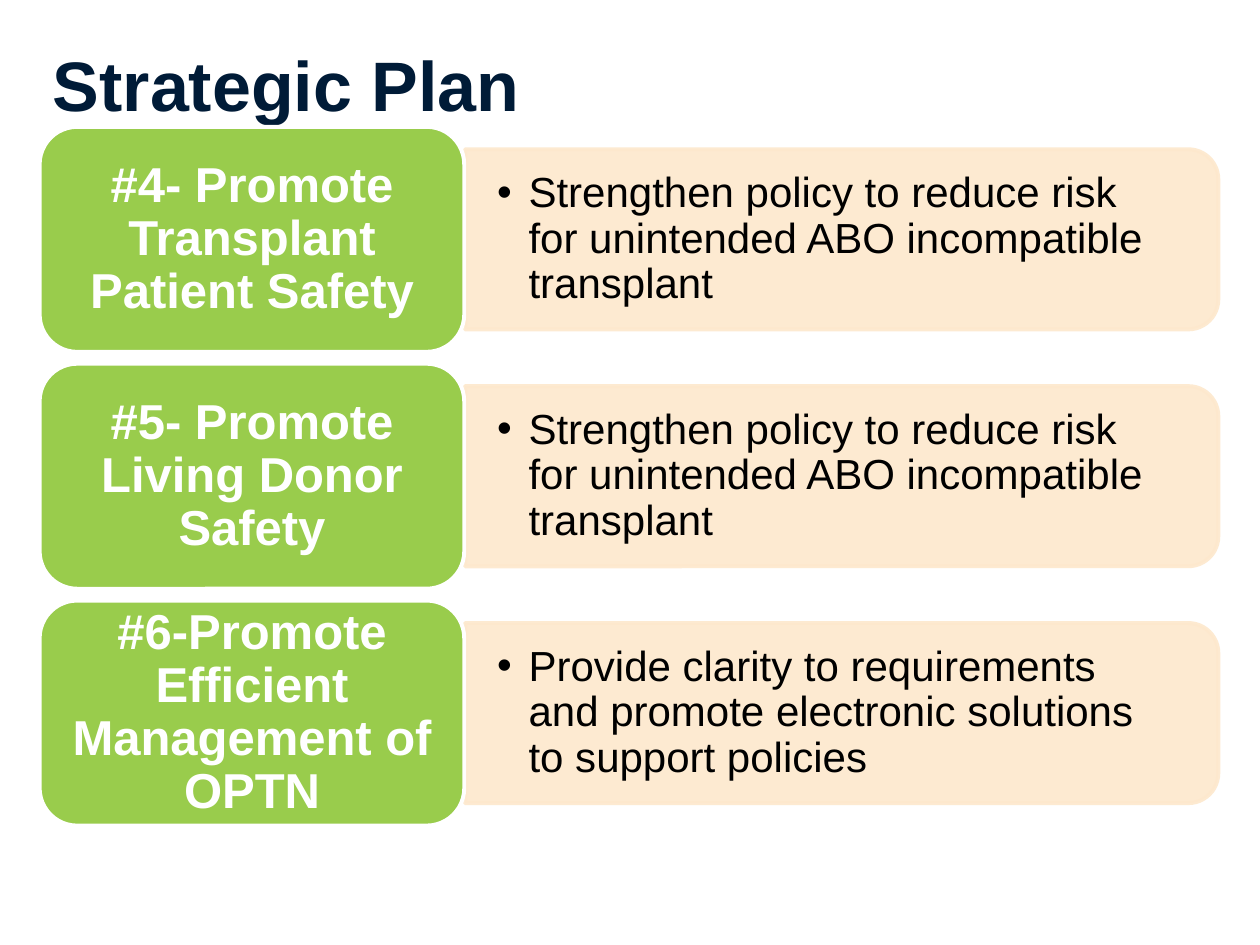
from lxml.etree import SubElement
from pptx import Presentation
from pptx.dml.color import RGBColor
from pptx.enum.shapes import MSO_SHAPE
from pptx.enum.text import MSO_ANCHOR, MSO_AUTO_SIZE, PP_ALIGN
from pptx.oxml.ns import qn
from pptx.util import Inches, Pt

NAVY = RGBColor(0x00, 0x1B, 0x37)
GREEN = RGBColor(0x99, 0xCC, 0x4C)
PEACH = RGBColor(0xFD, 0xE8, 0xCD)
WHITE = RGBColor(0xFF, 0xFF, 0xFF)
BLACK = RGBColor(0x00, 0x00, 0x00)

COLUMN = Inches(1)
ROW = Inches(1.88)
FIRST_ROW_TOP = Inches(0.96)

GOAL_CENTER, DETAIL_CENTER = 2.0, 6.63
GOALS = [
    ("#4- Promote Transplant Patient Safety",
     "Strengthen policy to reduce risk for unintended ABO incompatible transplant"),
    ("#5- Promote Living Donor Safety",
     "Strengthen policy to reduce risk for unintended ABO incompatible transplant"),
    ("#6-Promote Efficient Management of OPTN",
     "Provide clarity to requirements and promote electronic solutions to support policies"),
]


def grid_box(center_column, center_row, columns, rows):
    """Left, top, width and height of a box centred on a grid point."""
    width, height = round(columns * COLUMN), round(rows * ROW)
    left = round(center_column * COLUMN - width / 2)
    top = round(FIRST_ROW_TOP + center_row * ROW - height / 2)
    return left, top, width, height


def write_text(frame, text, *, size, color, bold=False, align=PP_ALIGN.LEFT,
               spacing=None, bullet=False, insets=(0.1, 0.05)):
    frame.word_wrap = True
    frame.auto_size = MSO_AUTO_SIZE.NONE
    frame.vertical_anchor = MSO_ANCHOR.MIDDLE
    frame.margin_left = frame.margin_right = Inches(insets[0])
    frame.margin_top = frame.margin_bottom = Inches(insets[1])
    paragraph = frame.paragraphs[0]
    paragraph.text = text
    paragraph.alignment = align
    if spacing:
        paragraph.line_spacing = spacing
    if bullet:
        add_bullet(paragraph)
    font = paragraph.runs[0].font
    font.name, font.size, font.bold = "Arial", Pt(size), bold
    font.color.rgb = color


def add_bullet(paragraph):
    properties = paragraph._p.get_or_add_pPr()
    properties.set("marL", str(Inches(0.25)))
    properties.set("indent", str(-Inches(0.25)))
    SubElement(properties, qn("a:buFont"), typeface="Arial")
    SubElement(properties, qn("a:buChar"), char="•")


class PlanSlide:
    """Holds the current slide and its style."""

    line_width = Pt(2.25)

    def __init__(self, presentation):
        self.slide = presentation.slides.add_slide(presentation.slide_layouts[5])
        self.shapes = self.slide.shapes

    def title(self, text, box):
        title = self.shapes.title
        title.left, title.top, title.width, title.height = box
        write_text(title.text_frame, text, size=40, color=NAVY, bold=True)

    def panel(self, preset, box, fill, line, opacity=100):
        shape = self.shapes.add_shape(preset, *box)
        shape.shadow.inherit = False
        shape.fill.solid()
        shape.fill.fore_color.rgb = fill
        shape.line.color.rgb = line
        shape.line.width = self.line_width
        if opacity < 100:
            for color in shape._element.spPr.iter(qn("a:srgbClr")):
                SubElement(color, qn("a:alpha"), val=str(opacity * 1000))
        return shape

    def label(self, text, box, **text_format):
        frame = self.shapes.add_textbox(*box).text_frame
        write_text(frame, text, spacing=0.9, **text_format)

    def goal_row(self, index, goal, detail):
        center = index + 0.5
        # The rounded top corners face right after a quarter turn.
        band = self.panel(MSO_SHAPE.ROUND_2_SAME_RECTANGLE,
                          grid_box(6.68, center, 1.43, 3.18), PEACH, PEACH, opacity=90)
        band.rotation = 90
        self.label(detail, grid_box(DETAIL_CENTER, center, 5.91, 0.69),
                   size=24, color=BLACK, bullet=True, insets=(0.27, 0.14))
        self.panel(MSO_SHAPE.ROUNDED_RECTANGLE,
                   grid_box(GOAL_CENTER, center, 3.37, 0.95), GREEN, WHITE)
        self.label(goal, grid_box(GOAL_CENTER, center, 3.19, 0.86),
                   size=28, color=WHITE, bold=True, align=PP_ALIGN.CENTER,
                   insets=(0.12, 0.06))


def main():
    presentation = Presentation()
    presentation.slide_width, presentation.slide_height = Inches(10), Inches(7.5)
    plan = PlanSlide(presentation)
    plan.title("Strategic Plan", grid_box(5.1, -0.16, 9.56, 1.03))
    for index, (goal, detail) in enumerate(GOALS):
        plan.goal_row(index, goal, detail)
    presentation.save("out.pptx")


if __name__ == "__main__":
    main()
